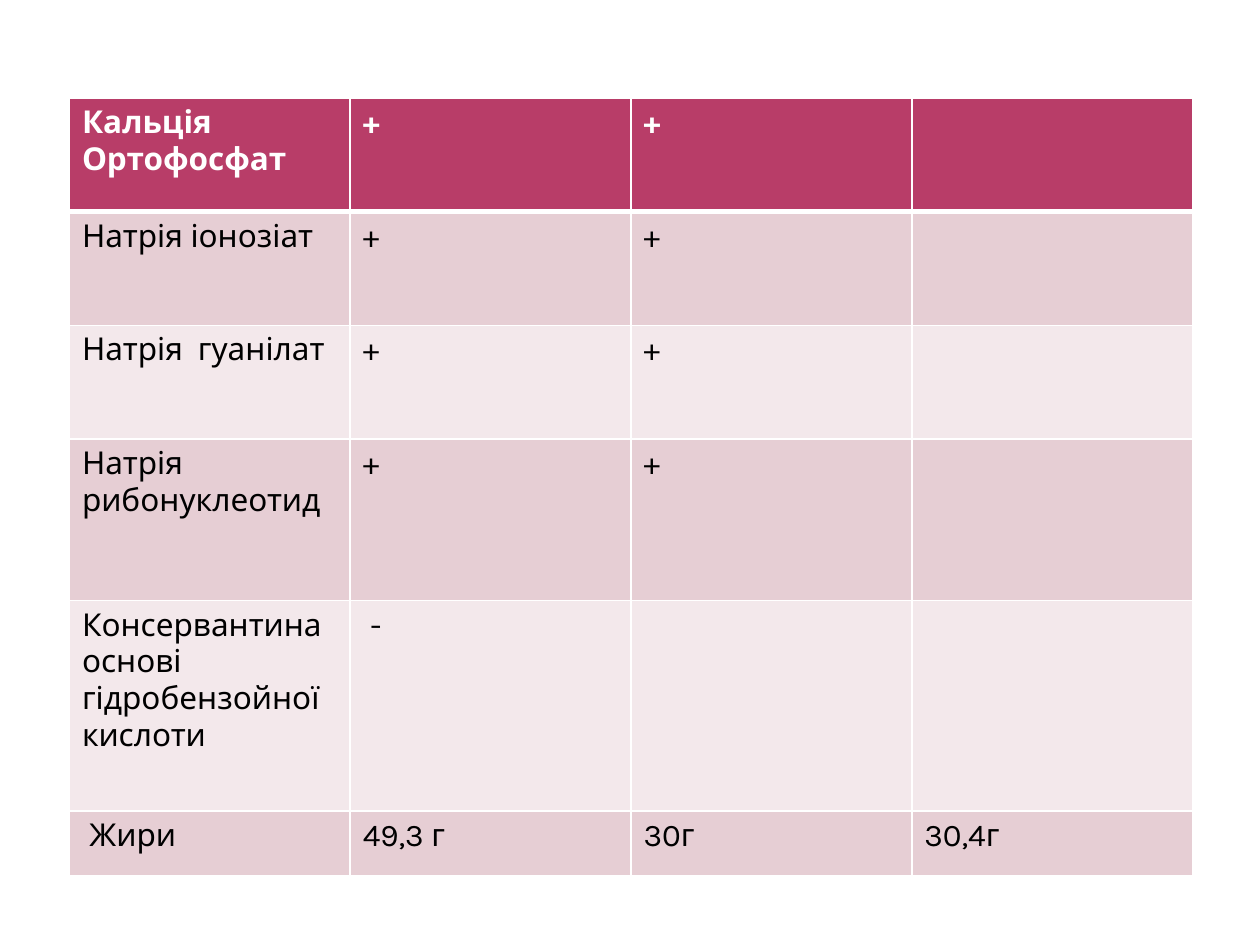
from lxml import etree
from pptx import Presentation
from pptx.dml.color import RGBColor
from pptx.oxml.ns import qn
from pptx.util import Cm, Pt

# Content: additive, then its presence in three products
ROWS = [
    ("Кальція Ортофосфат", "+", "+", ""),
    ("Натрія іонозіат", "+", "+", ""),
    ("Натрія  гуанілат", "+", "+", ""),
    ("Натрія рибонуклеотид", "+", "+", ""),
    ("Консервантина основі гідробензойної кислоти", " -", "", ""),
    (" Жири", "49,3 г", "30г", "30,4г"),
]
ROW_HEIGHTS = [2.29, 2.29, 2.29, 3.26, 4.24, 1.31]
COLUMN_WIDTH = 5.66
LEFT, TOP = 1.4, 1.98

FONT = "Karla"
HEADER_FILL = "B83D68"
BAND_FILLS = ("F3E8EB", "E6CED4")
WHITE, BLACK = "FFFFFF", "000000"
THIN, THICK = 1, 3


def color(hex_value):
    return RGBColor.from_string(hex_value)


def set_borders(cell, widths):
    """Add white borders ahead of the cell fill, in schema order."""
    properties = cell._tc.get_or_add_tcPr()
    for position, (side, width) in enumerate(widths.items()):
        line = etree.Element(qn(f"a:ln{side}"), w=str(Pt(width)))
        fill = etree.SubElement(line, qn("a:solidFill"))
        etree.SubElement(fill, qn("a:srgbClr"), val=WHITE)
        properties.insert(position, line)


def format_cell(cell, content, row):
    is_header = row == 0
    cell.text_frame.text = content
    cell.fill.solid()
    cell.fill.fore_color.rgb = color(HEADER_FILL if is_header else BAND_FILLS[row % 2])
    set_borders(cell, {
        "L": THIN,
        "R": THIN,
        "T": THICK if row == 1 else THIN,
        "B": THICK if is_header else THIN,
    })
    font = cell.text_frame.paragraphs[0].font
    for target in [font] + [run.font for run in cell.text_frame.paragraphs[0].runs]:
        target.name = FONT
        target.size = Pt(18)
        target.bold = is_header
        target.color.rgb = color(WHITE if is_header else BLACK)


def main():
    prs = Presentation()
    prs.slide_width, prs.slide_height = Cm(25.4), Cm(19.05)
    slide = prs.slides.add_slide(prs.slide_layouts[6])

    # Table grid
    columns = len(ROWS[0])
    additives = slide.shapes.add_table(
        len(ROWS), columns, Cm(LEFT), Cm(TOP),
        Cm(COLUMN_WIDTH * columns), Cm(sum(ROW_HEIGHTS)),
    ).table
    for column in additives.columns:
        column.width = Cm(COLUMN_WIDTH)
    for table_row, height in zip(additives.rows, ROW_HEIGHTS):
        table_row.height = Cm(height)

    # Cells
    for row, contents in enumerate(ROWS):
        for column, content in enumerate(contents):
            format_cell(additives.cell(row, column), content, row)

    prs.save("out.pptx")


if __name__ == "__main__":
    main()
